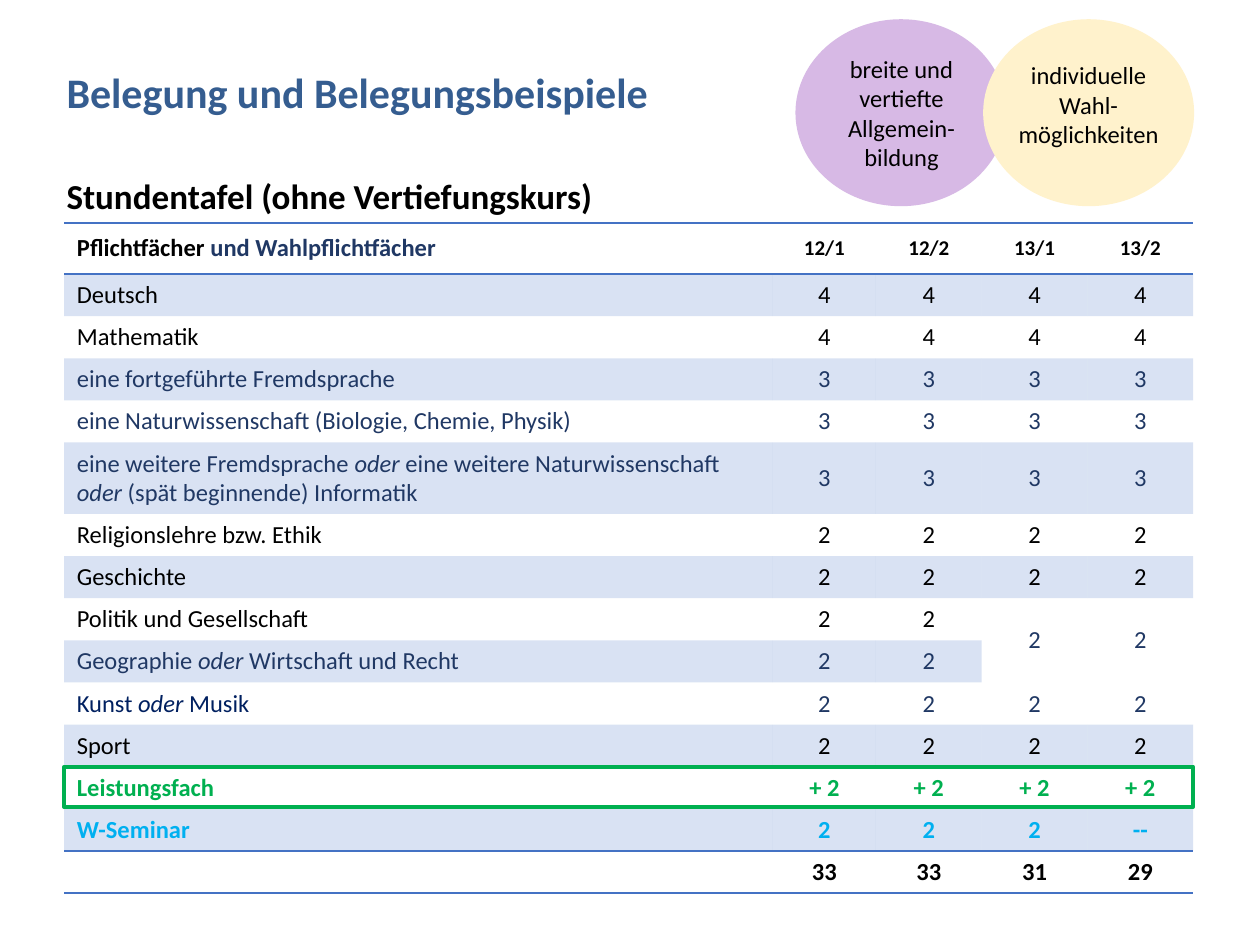
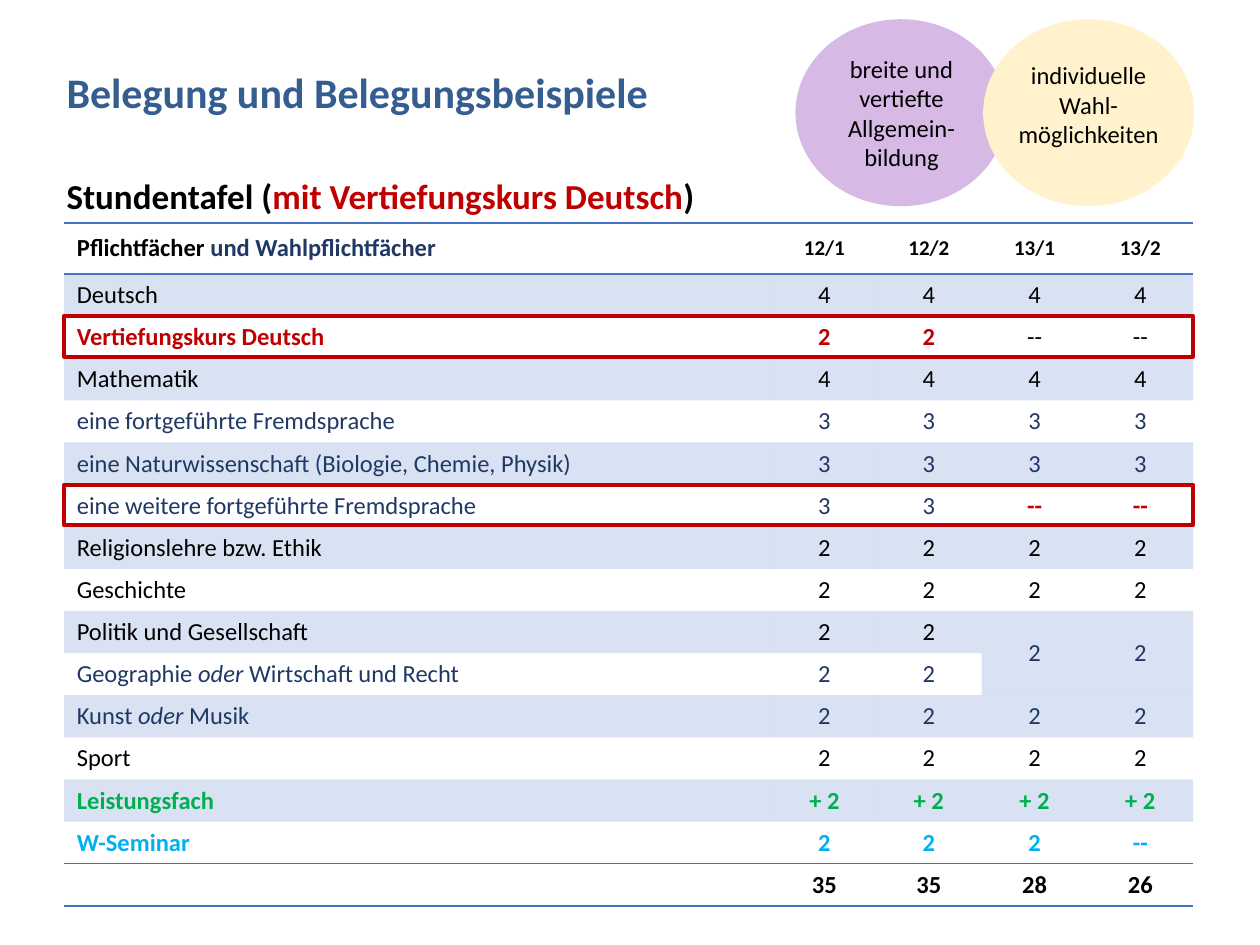
import collections

import lxml.etree
import pptx
import pptx.dml.color
import pptx.enum.shapes
import pptx.enum.text
import pptx.oxml.ns
import pptx.util

FONT = "Calibri"
BLACK, NAVY, DEEP_NAVY, RED = "000000", "203864", "002060", "C00000"
GREEN, CYAN, TITLE_BLUE, TABLE_BLUE = "00B050", "00B0F0", "355D90", "4472C4"
LILAC, CREAM = "D7B9E5", "FFF2CC"
NO_STYLE = "{2D5ABB26-0587-4C30-8999-92F81FD0307C}"

COLUMN_WEIGHTS = [5.63, 0.82, 0.84, 0.84, 0.84]
HEADER_SHARE, ROW_SHARE, DOUBLE_SHARE = 5.4, 4.46, 7.53
FRAME_ROWS = 0.96

CENTER = pptx.enum.text.PP_ALIGN.CENTER
LEFT = pptx.enum.text.PP_ALIGN.LEFT
SHAPES = pptx.enum.shapes.MSO_SHAPE

Style = collections.namedtuple("Style", "color bold", defaults=[False])
Box = collections.namedtuple("Box", "left top width height")
Row = collections.namedtuple(
    "Row", "label values style tail_style label_style share frame",
    defaults=[Style(BLACK), None, None, ROW_SHARE, None])

PLAIN, HEAVY, CHOICE = Style(BLACK), Style(BLACK, True), Style(NAVY)
GERMAN = Row("Deutsch", ["4"] * 4)
MATHS = Row("Mathematik", ["4"] * 4)
LANGUAGE = Row("eine fortgeführte Fremdsprache", ["3"] * 4, CHOICE)
SCIENCE = Row("eine Naturwissenschaft (Biologie, Chemie, Physik)", ["3"] * 4, CHOICE)
HUMANITIES = [
    Row("Religionslehre bzw. Ethik", ["2"] * 4),
    Row("Geschichte", ["2"] * 4),
    Row("Politik und Gesellschaft", ["2"] * 4, tail_style=CHOICE),
    Row("Geographie oder Wirtschaft und Recht", ["2"] * 2, CHOICE),
]
ARTS = Row("Kunst oder Musik", ["2"] * 4, CHOICE)
SPORT = Row("Sport", ["2"] * 4)
ADVANCED = Row("Leistungsfach", ["+ 2"] * 4, Style(GREEN, True))
SEMINAR = Row("W-Seminar", ["2", "2", "2", "--"], Style(CYAN, True))

STANDARD_ROWS = [
    GERMAN, MATHS, LANGUAGE, SCIENCE,
    Row("eine weitere Fremdsprache oder eine weitere Naturwissenschaft "
        "oder (spät beginnende) Informatik", ["3"] * 4, CHOICE, share=DOUBLE_SHARE),
    *HUMANITIES, ARTS._replace(label_style=Style(DEEP_NAVY)), SPORT,
    ADVANCED._replace(frame=GREEN), SEMINAR,
    Row("", ["33", "33", "31", "29"], HEAVY),
]
DEEPENED_ROWS = [
    GERMAN,
    Row("Vertiefungskurs Deutsch", ["2", "2", "--", "--"], Style(RED, True), PLAIN, frame=RED),
    MATHS, LANGUAGE, SCIENCE,
    Row("eine weitere fortgeführte Fremdsprache", ["3", "3", "--", "--"], CHOICE,
        Style(RED, True), frame=RED),
    *HUMANITIES, ARTS, SPORT, ADVANCED, SEMINAR,
    Row("", ["35", "35", "28", "26"], HEAVY),
]


def inner_box(box, x, y, w, h):
    """Return the inner box given in percent of an outer one."""
    return Box(int(box.left + box.width * x / 100), int(box.top + box.height * y / 100),
               int(box.width * w / 100), int(box.height * h / 100))


def rgb(value):
    """Turn a hex string into a colour."""
    return pptx.dml.color.RGBColor.from_string(value)


def add_run(p, text, style, size=14, italic=False):
    """Append one formatted run."""
    r = p.add_run()
    r.text = text
    r.font.name, r.font.size = FONT, pptx.util.Pt(size)
    r.font.bold, r.font.italic = style.bold, italic
    r.font.color.rgb = rgb(style.color)


def add_text(s, box, paragraphs, size, align=LEFT):
    """Add a wrapping text box; each paragraph is a list of (text, style)."""
    tf = s.shapes.add_textbox(*box).text_frame
    tf.word_wrap = True
    for i, runs in enumerate(paragraphs):
        p = tf.add_paragraph() if i else tf.paragraphs[0]
        p.alignment = align
        for text, style in runs:
            add_run(p, text, style, size)


def add_shape(s, kind, box, line, width, fill=None):
    """Add an outlined shape, hollow unless a fill is given."""
    sp = s.shapes.add_shape(kind, *box)
    sp.shadow.inherit = False
    if fill:
        sp.fill.solid()
        sp.fill.fore_color.rgb = rgb(fill)
    else:
        sp.fill.background()
    sp.line.color.rgb = rgb(line)
    sp.line.width = pptx.util.Pt(width)


def add_badges(s, box):
    """Draw the two overlapping ellipses with their captions."""
    badges = [
        (LILAC, 0, (5.71, 14.97, 41.59, 70.75), ["breite und vertiefte Allgemein-bildung"]),
        (CREAM, 47.3, (51.11, 18.37, 45.08, 55.1), ["individuelle", "Wahl-", "möglichkeiten"]),
    ]
    for color, x, caption, lines in badges:
        add_shape(s, SHAPES.OVAL, inner_box(box, x, 0, 52.7, 100), color, 1, color)
        add_text(s, inner_box(box, *caption), [[(line, PLAIN)] for line in lines], 14, CENTER)


def rule_cell(cell):
    """Draw thin lines above and below a cell."""
    qn = pptx.oxml.ns.qn
    for tag in ("a:lnT", "a:lnB"):
        ln = lxml.etree.SubElement(cell._tc.get_or_add_tcPr(), qn(tag), w="12700")
        fill = lxml.etree.SubElement(ln, qn("a:solidFill"))
        lxml.etree.SubElement(fill, qn("a:srgbClr"), val=TABLE_BLUE)


def fill_cell(cell, banded):
    """Tint a banded cell and leave any other clear."""
    if not banded:
        cell.fill.background()
        return
    cell.fill.solid()
    cell.fill.fore_color.rgb = rgb(TABLE_BLUE)
    qn = pptx.oxml.ns.qn
    color = cell._tc.tcPr.find(".//" + qn("a:srgbClr"))
    lxml.etree.SubElement(color, qn("a:alpha"), val="20000")


def write_label(cell, label, style):
    """Write a subject, with each "oder" in italics."""
    p = cell.text_frame.paragraphs[0]
    for i, text in enumerate(label.split("oder")):
        if i:
            add_run(p, "oder", style, italic=True)
        if text:
            add_run(p, text, style)


def write_values(cells, values, styles, size=14):
    """Write the centred values of one row."""
    for cell, value, style in zip(cells, values, styles):
        cell.vertical_anchor = pptx.enum.text.MSO_ANCHOR.MIDDLE
        p = cell.text_frame.paragraphs[0]
        p.alignment = CENTER
        add_run(p, value, style, size)


def add_timetable(s, box, rows, unit):
    """Build the timetable."""
    table = s.shapes.add_table(len(rows) + 1, len(COLUMN_WEIGHTS), *box).table
    table._tbl.tblPr.find(pptx.oxml.ns.qn("a:tableStyleId")).text = NO_STYLE
    table.first_row = table.horz_banding = False
    for column, weight in zip(table.columns, COLUMN_WEIGHTS):
        column.width = int(box.width * weight / sum(COLUMN_WEIGHTS))
    for line, share in zip(table.rows, [HEADER_SHARE] + [row.share for row in rows]):
        line.height = int(unit * share)

    head = list(table.rows[0].cells)
    head[0].vertical_anchor = pptx.enum.text.MSO_ANCHOR.MIDDLE
    write_label(head[0], "Pflichtfächer ", HEAVY)
    write_label(head[0], "und Wahlpflichtfächer", Style(NAVY, True))
    write_values(head[1:], ["12/1", "12/2", "13/1", "13/2"], [HEAVY] * 4, 12)

    for i, row in enumerate(rows, 1):
        cells = list(table.rows[i].cells)
        tail = row.tail_style or row.style
        write_label(cells[0], row.label, row.label_style or row.style)
        write_values(cells[1:], row.values, [row.style] * 2 + [tail] * 2)

    for i, line in enumerate(table.rows):
        for cell in line.cells:
            if i in (0, len(rows)):
                rule_cell(cell)
            fill_cell(cell, i % 2 == 1 and i < len(rows))
            p = cell.text_frame.paragraphs[0]
            if not p.runs:
                lxml.etree.SubElement(p._p, pptx.oxml.ns.qn("a:endParaRPr"), sz="1400")

    for i, row in enumerate(rows, 1):
        for column in range(len(row.values) + 1, len(COLUMN_WEIGHTS)):
            table.cell(i - 1, column).merge(table.cell(i, column))


def add_frames(s, box, rows, unit):
    """Outline the highlighted timetable rows."""
    top = box.top + unit * HEADER_SHARE
    for row in rows:
        if row.frame:
            frame = Box(box.left, int(top), box.width, int(unit * row.share * FRAME_ROWS))
            add_shape(s, SHAPES.RECTANGLE, frame, row.frame, 2.25)
        top += unit * row.share


def add_timetable_slide(prs, subtitle, rows):
    """Add one slide with headings, timetable, badges and frames."""
    s = prs.slides.add_slide(prs.slide_layouts[6])
    page = Box(0, 0, prs.slide_width, prs.slide_height)
    unit = page.height / 100
    title = [("Belegung und Belegungsbeispiele", Style(TITLE_BLUE, True))]
    add_text(s, inner_box(page, 4.3, 6.4, 93.7, 11.6), [title], 24)
    add_text(s, inner_box(page, 4.3, 17.8, 90.5, 5.87), [subtitle], 20)
    height = HEADER_SHARE + sum(row.share for row in rows)
    box = inner_box(page, 5.1, 23.6, 89.6, height)
    add_timetable(s, box, rows, unit)
    add_badges(s, inner_box(page, 63.2, 2.13, 31.5, 19.6))
    add_frames(s, box, rows, unit)


def main():
    """Build and save the presentation."""
    prs = pptx.Presentation()
    prs.slide_width, prs.slide_height = pptx.util.Inches(10), pptx.util.Inches(7.5)
    add_timetable_slide(prs, [("Stundentafel (ohne Vertiefungskurs)", HEAVY)], STANDARD_ROWS)
    add_timetable_slide(prs, [("Stundentafel (", HEAVY),
                              ("mit Vertiefungskurs Deutsch", Style(RED, True)),
                              (")", HEAVY)], DEEPENED_ROWS)
    prs.save("out.pptx")


if __name__ == "__main__":
    main()
